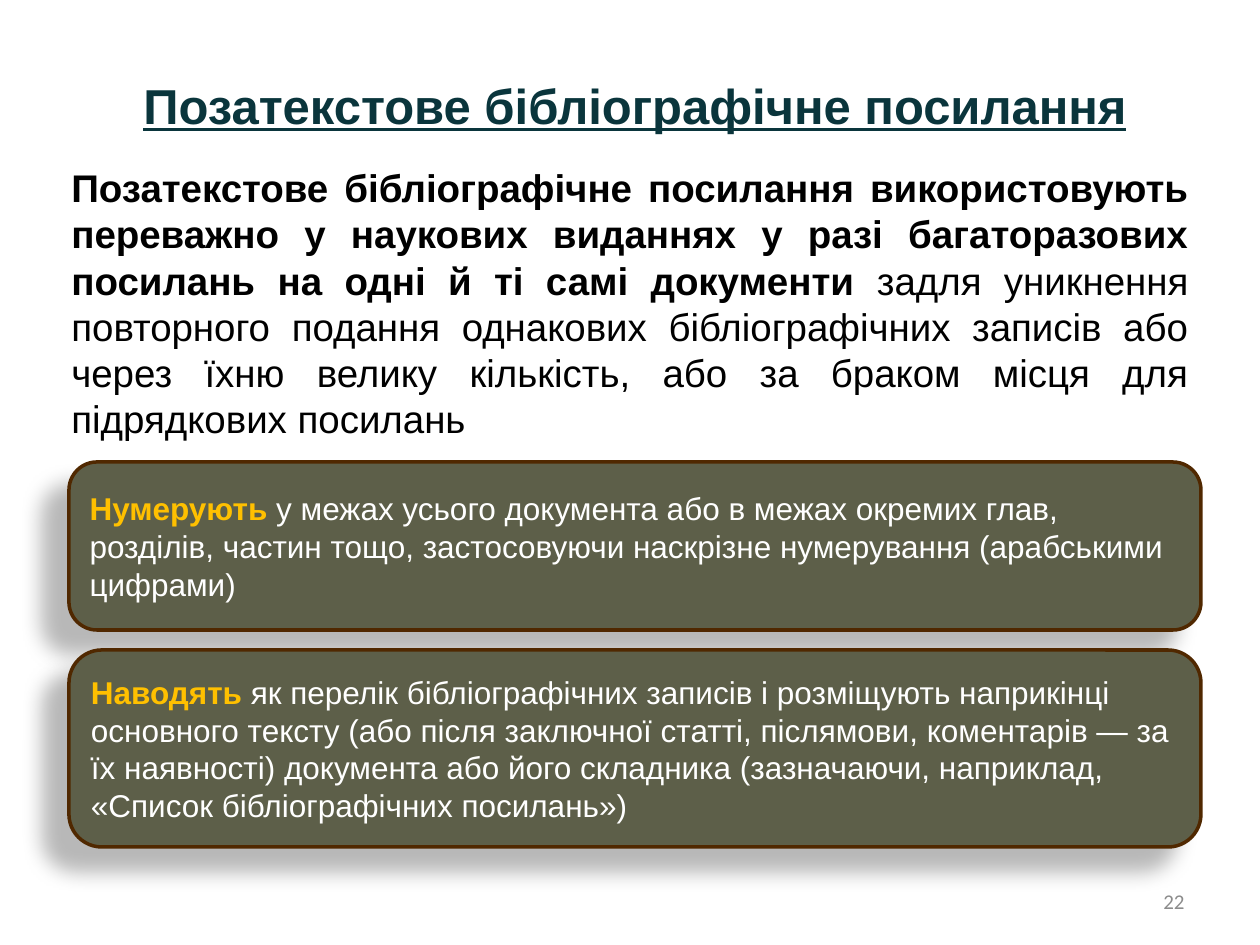
from lxml.etree import SubElement
from pptx import Presentation
from pptx.dml.color import RGBColor
from pptx.enum.shapes import MSO_SHAPE as Shape
from pptx.enum.text import MSO_ANCHOR as Anchor, PP_ALIGN as Align
from pptx.oxml.ns import qn
from pptx.util import Emu, Pt

SCALE = 914400 / 126
INK, WHITE, GOLD = "000000", "FFFFFF", "FFC000"
TEAL, GREY, OLIVE, BROWN = "0A353C", "8C8C8C", "5D5F49", "502800"


def px(n):
    return Emu(round(n * SCALE))


def rgb(code):
    return RGBColor.from_string(code)


class Deck:
    font = "Arial"

    def __init__(self, wide, high):
        self.prs = Presentation()
        self.prs.slide_width, self.prs.slide_height = px(wide), px(high)
        self.slide = self.prs.slides.add_slide(self.prs.slide_layouts[6])

    def fill(self, frame, runs, size, align, anchor, font=None):
        """Write runs of (text, colour, bold) into a text frame."""
        frame.word_wrap = True
        frame.vertical_anchor = anchor
        para = frame.paragraphs[0]
        para.alignment = align
        for text, color, bold in runs:
            run = para.add_run()
            run.text = text
            run.font.name = font or self.font
            run.font.size = Pt(size)
            run.font.bold = bold
            run.font.color.rgb = rgb(color)
        return para

    def text(self, box, runs, size, align, anchor=Anchor.TOP, font=None):
        shape = self.slide.shapes.add_textbox(*map(px, box))
        return self.fill(shape.text_frame, runs, size, align, anchor, font)

    def card(self, box, runs):
        shape = self.slide.shapes.add_shape(
            Shape.ROUNDED_RECTANGLE, *map(px, box))
        shape.fill.solid()
        shape.fill.fore_color.rgb = rgb(OLIVE)
        shape.line.color.rgb = rgb(BROWN)
        shape.line.width = Pt(2)
        self.shade(shape)
        self.fill(shape.text_frame, runs, 18, Align.LEFT, Anchor.MIDDLE)

    def shade(self, shape):
        """Give the shape a soft shadow to the lower left."""
        shape.shadow.inherit = False
        effects = shape._element.spPr.find(qn("a:effectLst"))
        outer = SubElement(
            effects, qn("a:outerShdw"), blurRad=str(Pt(11.8)),
            dist=str(Pt(19.7)), dir=str(141 * 60000),
            algn="tl", rotWithShape="0")
        color = SubElement(outer, qn("a:srgbClr"), val=INK)
        SubElement(color, qn("a:alpha"), val="28000")


def main():
    deck = Deck(1260, 945)
    deck.text((903, 876, 294, 50), [("22", GREY, False)], 12,
              Align.RIGHT, Anchor.MIDDLE, "Calibri")
    title = deck.text(
        (59, 69, 1152, 72),
        [("Позатекстове бібліографічне посилання", TEAL, True)],
        28, Align.CENTER)
    title.runs[0].font.underline = True

    deck.card((69, 462, 1132, 168), [
        ("Нумерують ", GOLD, True),
        ("у межах усього документа або в межах окремих глав, розділів, "
         "частин тощо, застосовуючи наскрізне нумерування "
         "(арабськими цифрами)", WHITE, False)])
    deck.card((69, 650, 1132, 197), [
        ("Наводять", GOLD, True),
        (" як перелік бібліографічних записів і розміщують наприкінці "
         "основного тексту (або після заключної статті, післямови, "
         "коментарів — за їх наявності) документа або його складника "
         "(зазначаючи, наприклад, «Список бібліографічних посилань»)",
         WHITE, False)])

    deck.text((59, 158, 1142, 292), [
        ("Позатекстове бібліографічне посилання використовують переважно "
         "у наукових виданнях у разі багаторазових посилань на одні й ті "
         "самі документи ", INK, True),
        ("задля уникнення повторного подання однакових бібліографічних "
         "записів або через їхню велику кількість, або за браком місця "
         "для підрядкових посилань", INK, False)],
        22, Align.JUSTIFY)
    deck.prs.save("out.pptx")


if __name__ == "__main__":
    main()
